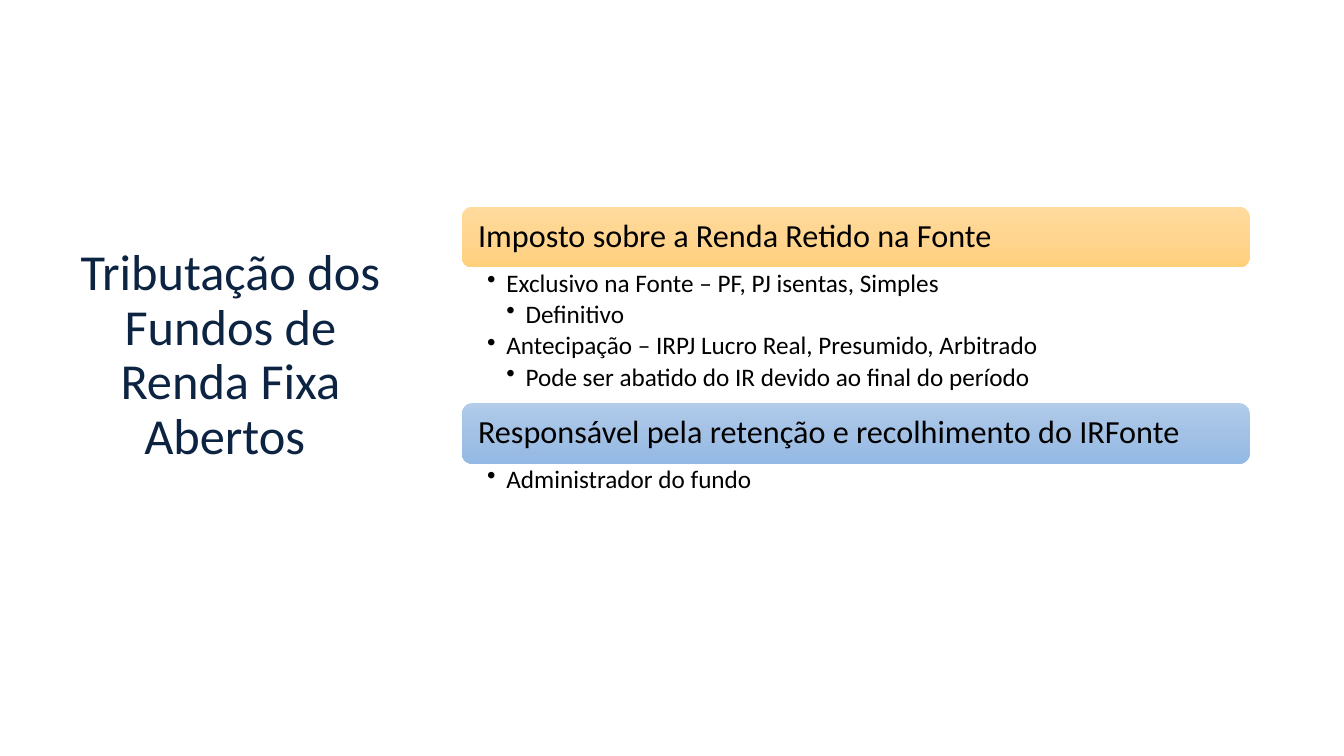
import copy
from dataclasses import dataclass

import pptx
import pptx.dml.color
import pptx.enum.dml
import pptx.enum.shapes
import pptx.enum.text
import pptx.oxml
import pptx.oxml.ns
import pptx.util

Inches, Pt = pptx.util.Inches, pptx.util.Pt
Align, Anchor = pptx.enum.text.PP_ALIGN, pptx.enum.text.MSO_ANCHOR
qn = pptx.oxml.ns.qn


@dataclass(frozen=True)
class Theme:
    font: str = "Calibri"
    title_size: int = 36
    heading_size: int = 23
    bullet_size: int = 18
    title_color: str = "0C2342"
    text_color: str = "000000"
    orange: tuple = ("FFDB9E", "FFD590", "FFD07C")
    blue: tuple = ("B1CBE9", "A3C1E5", "93B9E4")
    line_spacing: float = 0.9
    indent: float = 0.19


THEME = Theme()
COLUMNS, ROWS = 128, 72


def rgb(value):
    return pptx.dml.color.RGBColor.from_string(value)


def write(paragraph, text, *, size, color=THEME.text_color, align=Align.LEFT,
          after=0, level=0):
    """Write one formatted paragraph; a level above zero gets a bullet."""
    paragraph.alignment = align
    paragraph.line_spacing = THEME.line_spacing
    paragraph.space_before = Pt(0)
    paragraph.space_after = Pt(after)
    if level:
        paragraph.level = level
        properties = paragraph._p.get_or_add_pPr()
        properties.set("marL", str(Inches(THEME.indent * level)))
        properties.set("indent", str(-Inches(THEME.indent)))
        bullet = pptx.oxml.parse_xml(
            f'<a:buChar {pptx.oxml.ns.nsdecls("a")} char="•"/>')
        properties.append(bullet)
    run = paragraph.add_run()
    run.text = text
    run.font.name = THEME.font
    run.font.size = Pt(size)
    run.font.color.rgb = rgb(color)


class SlideBuilder:
    def __init__(self, presentation, theme):
        self.theme = theme
        self.column = presentation.slide_width / COLUMNS
        self.row = presentation.slide_height / ROWS
        self.slide = presentation.slides.add_slide(presentation.slide_layouts[5])

    def box(self, left, top, width, height):
        return (round(left * self.column), round(top * self.row),
                round(width * self.column), round(height * self.row))

    def frame(self, shape, anchor, insets):
        text_frame = shape.text_frame
        text_frame.word_wrap = True
        text_frame.auto_size = pptx.enum.text.MSO_AUTO_SIZE.NONE
        text_frame.vertical_anchor = anchor
        (text_frame.margin_left, text_frame.margin_top,
         text_frame.margin_right, text_frame.margin_bottom) = map(Inches, insets)
        return text_frame

    def title(self, text, *place):
        shape = self.slide.shapes.title
        shape.left, shape.top, shape.width, shape.height = self.box(*place)
        text_frame = self.frame(shape, Anchor.TOP, (0.1, 1.15, 0.1, 0.05))
        write(text_frame.paragraphs[0], text, size=self.theme.title_size,
              color=self.theme.title_color, align=Align.CENTER)

    def heading(self, text, colors, *place):
        shape = self.slide.shapes.add_shape(
            pptx.enum.shapes.MSO_SHAPE.ROUNDED_RECTANGLE, *self.box(*place))
        shape.shadow.inherit = False
        shape.line.fill.background()
        shape.fill.gradient()
        shape.fill.gradient_angle = 270
        # A third gradient stop goes between the two default ones
        stop_list = shape._element.spPr.find(".//" + qn("a:gsLst"))
        stop_list.insert(1, copy.deepcopy(stop_list[0]))
        for index, stop in enumerate(shape.fill.gradient_stops):
            stop.position = index / 2
            stop.color.rgb = rgb(colors[index])
        text_frame = self.frame(shape, Anchor.MIDDLE, (0.13, 0.1, 0.13, 0.1))
        write(text_frame.paragraphs[0], text, size=self.theme.heading_size)

    def bullets(self, items, *place):
        shape = self.slide.shapes.add_textbox(*self.box(*place))
        text_frame = self.frame(shape, Anchor.TOP, (0.25, 0.03, 0.18, 0.03))
        for index, (level, text) in enumerate(items):
            paragraph = (text_frame.add_paragraph() if index
                         else text_frame.paragraphs[0])
            write(paragraph, text, size=self.theme.bullet_size, after=3,
                  level=level)


def main():
    presentation = pptx.Presentation()
    presentation.slide_width = Inches(13.33)
    presentation.slide_height = Inches(7.5)
    builder = SlideBuilder(presentation, THEME)

    # Title on the left
    builder.title("Tributação dos Fundos de Renda Fixa Abertos ",
                  6.7, 12.5, 30.5, 50.9)

    # Headings with their bullets, stacked on the right
    sections = [
        ("Imposto sobre a Renda Retido na Fonte", THEME.orange, 12.95, [
            (1, "Exclusivo na Fonte – PF, PJ isentas, Simples"),
            (2, "Definitivo"),
            (1, "Antecipação – IRPJ Lucro Real, Presumido, Arbitrado"),
            (2, "Pode ser abatido do IR devido ao final do período"),
        ]),
        ("Responsável pela retenção e recolhimento do IRFonte", THEME.blue, 4.05, [
            (1, "Administrador do fundo"),
        ]),
    ]
    left, top, width, heading_height = 44, 19.7, 75, 5.75
    for heading, colors, bullets_height, items in sections:
        builder.heading(heading, colors, left, top, width, heading_height)
        top += heading_height
        builder.bullets(items, left, top, width, bullets_height)
        top += bullets_height

    presentation.save("out.pptx")


if __name__ == "__main__":
    main()
